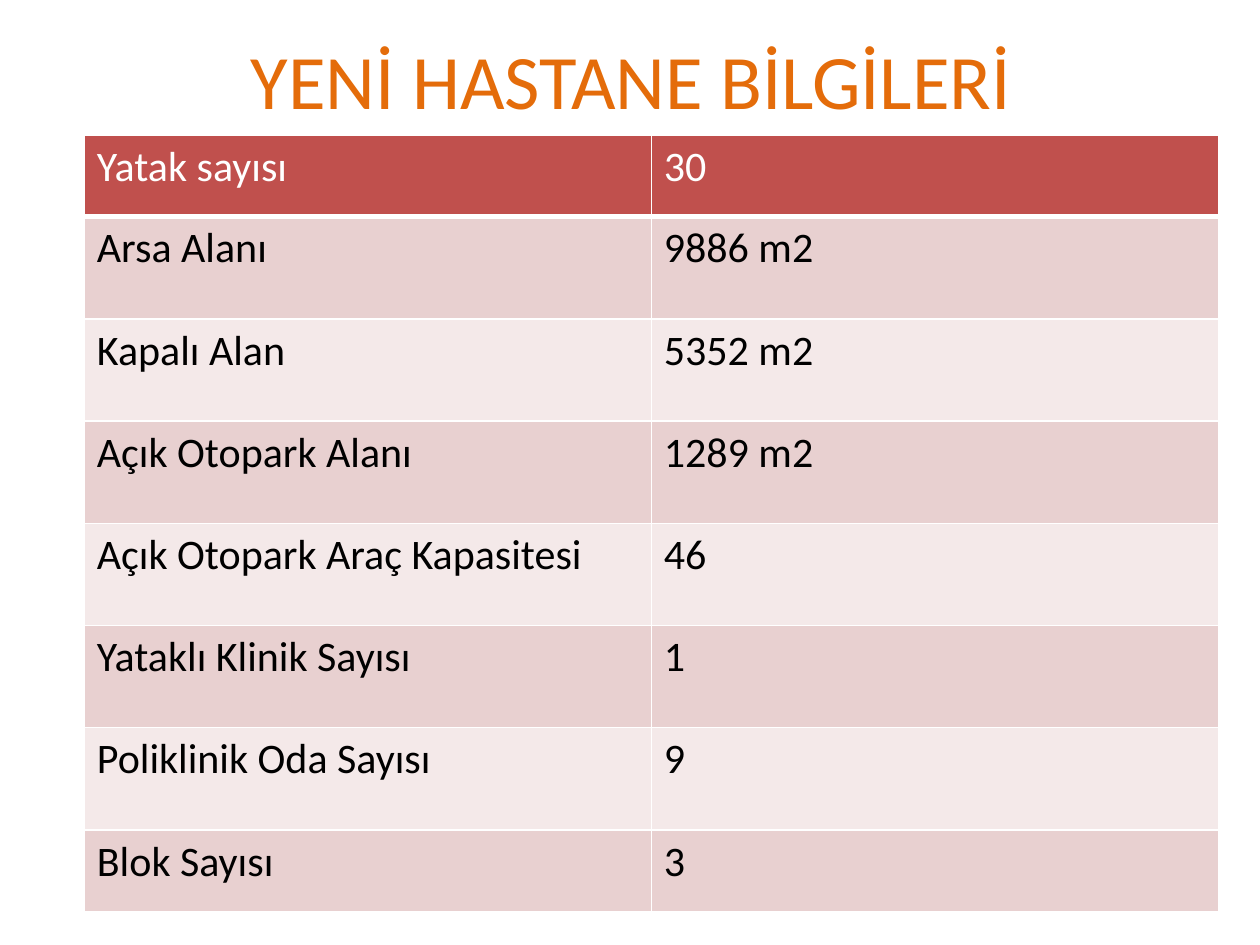
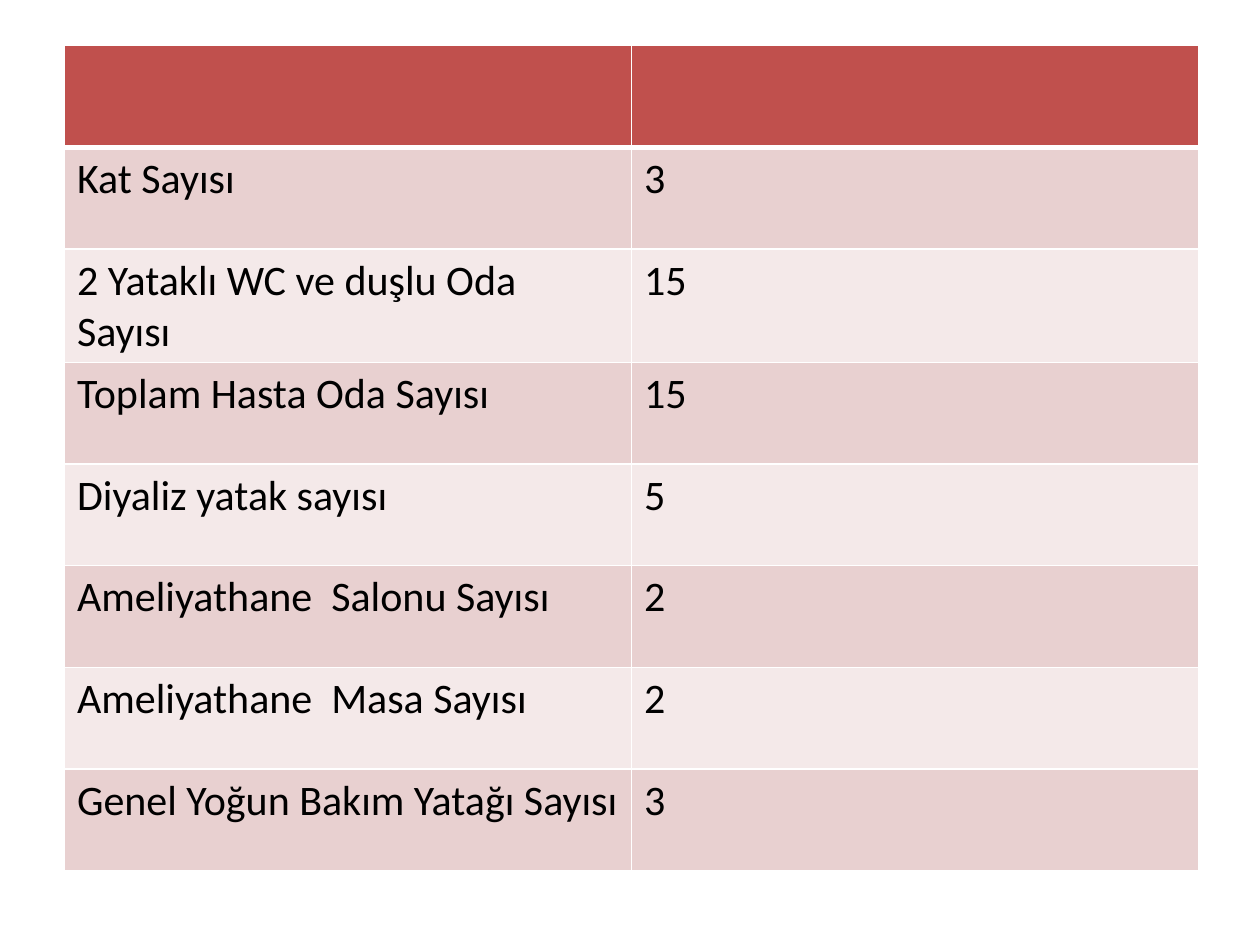
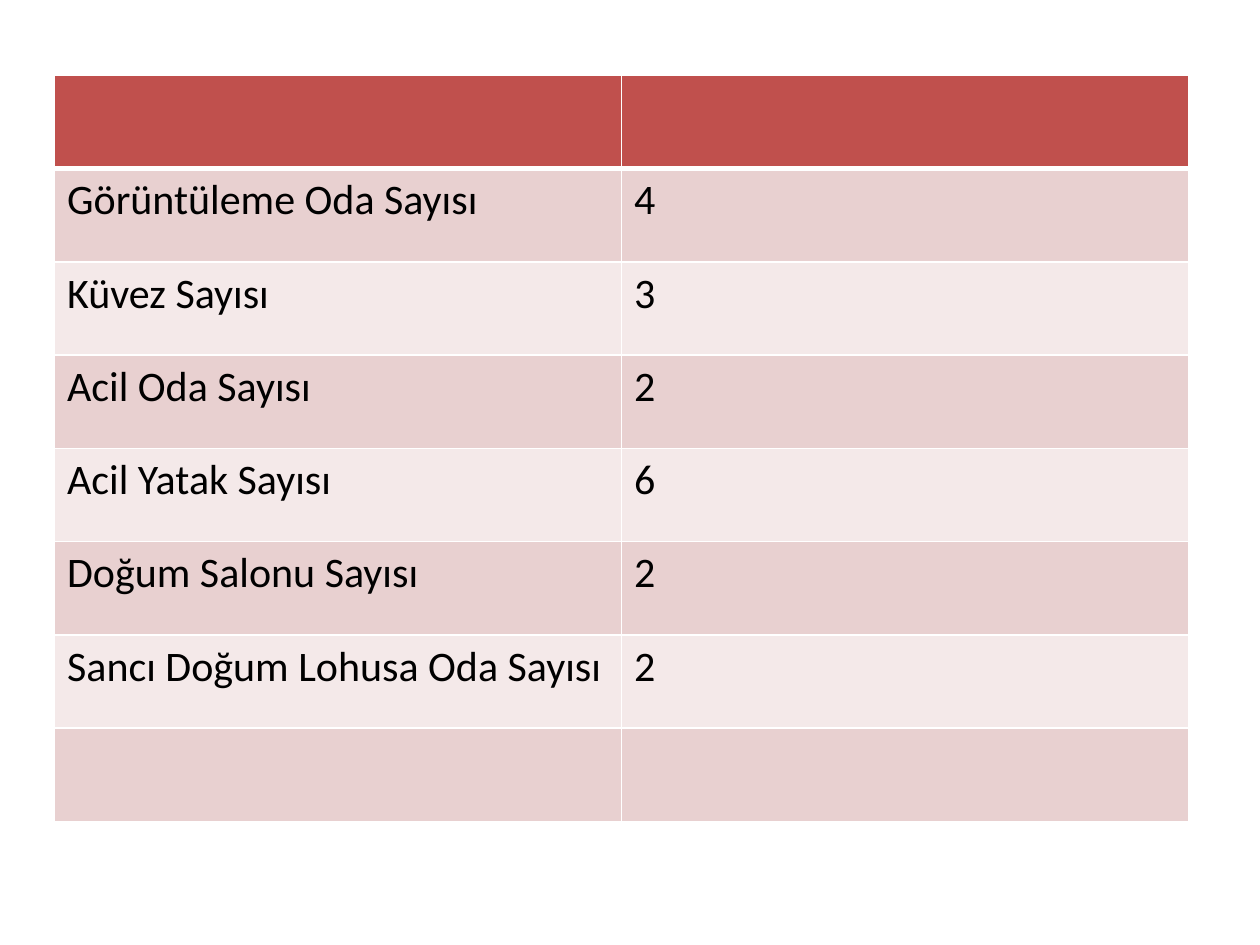
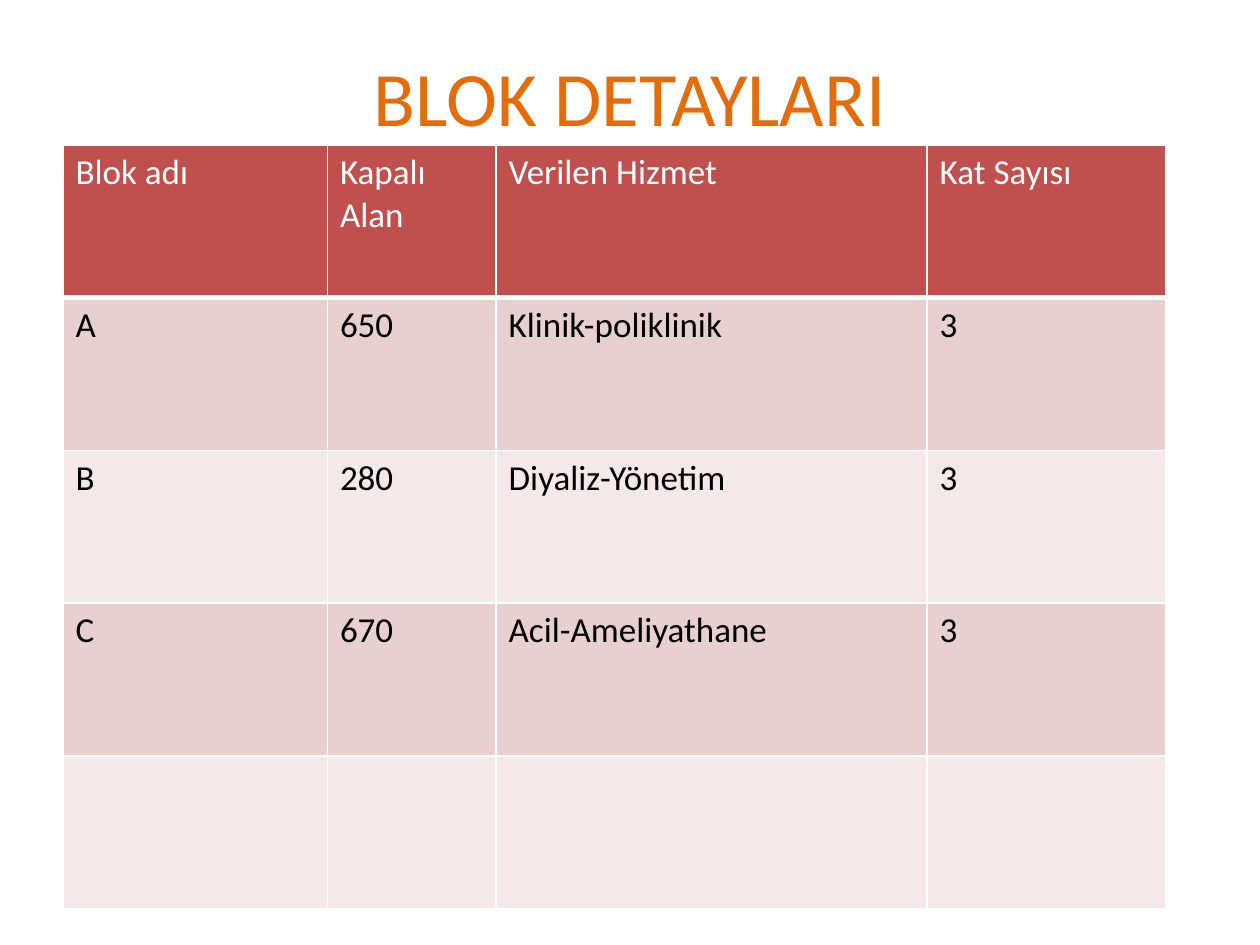
import lxml.etree
import pptx
import pptx.dml.color
import pptx.enum.text
import pptx.oxml.ns
import pptx.util

Cm = pptx.util.Cm
Pt = pptx.util.Pt

FONT = "Calibri"
TITLE_COLOR = "E46C0A"
HEADER_FILL = "C0504D"
BAND_FILLS = ("E8D0D0", "F4E9E9")
WHITE = "FFFFFF"
BLACK = "000000"
TITLE_WIDTH = 22.86
PAIR_COLUMNS = [11.43, 11.43]

HOSPITAL_ROWS = [
    ("Yatak sayısı", "30"),
    ("Arsa Alanı", "9886 m2"),
    ("Kapalı Alan", "5352 m2"),
    ("Açık Otopark Alanı", "1289 m2"),
    ("Açık Otopark Araç Kapasitesi", "46"),
    ("Yataklı Klinik Sayısı", "1"),
    ("Poliklinik Oda Sayısı", "9"),
    ("Blok Sayısı", "3"),
]
ROOM_ROWS = [
    ("", ""),
    ("Kat Sayısı", "3"),
    ("2 Yataklı WC ve duşlu Oda Sayısı", "15"),
    ("Toplam Hasta Oda Sayısı", "15"),
    ("Diyaliz yatak sayısı", "5"),
    ("Ameliyathane  Salonu Sayısı", "2"),
    ("Ameliyathane  Masa Sayısı", "2"),
    ("Genel Yoğun Bakım Yatağı Sayısı", "3"),
]
CARE_ROWS = [
    ("", ""),
    ("Görüntüleme Oda Sayısı", "4"),
    ("Küvez Sayısı", "3"),
    ("Acil Oda Sayısı", "2"),
    ("Acil Yatak Sayısı", "6"),
    ("Doğum Salonu Sayısı", "2"),
    ("Sancı Doğum Lohusa Oda Sayısı", "2"),
    ("", ""),
]
BLOCK_ROWS = [
    ("Blok adı", "Kapalı Alan", "Verilen Hizmet", "Kat Sayısı"),
    ("A", "650", "Klinik-poliklinik", "3"),
    ("B", "280", "Diyaliz-Yönetim", "3"),
    ("C", "670", "Acil-Ameliyathane", "3"),
    ("", "", "", ""),
]


def rgb(color):
    return pptx.dml.color.RGBColor.from_string(color)


def add_slide(presentation):
    return presentation.slides.add_slide(presentation.slide_layouts[6])


def format_runs(paragraph, size, color):
    for run in paragraph.runs:
        run.font.name = FONT
        run.font.size = Pt(size)
        run.font.color.rgb = rgb(color)


def add_title(slide, text, left, top, height):
    title = slide.shapes.add_textbox(Cm(left), Cm(top), Cm(TITLE_WIDTH), Cm(height))
    text_frame = title.text_frame
    text_frame.word_wrap = True
    text_frame.vertical_anchor = pptx.enum.text.MSO_ANCHOR.MIDDLE
    text_frame.text = text
    paragraph = text_frame.paragraphs[0]
    paragraph.alignment = pptx.enum.text.PP_ALIGN.CENTER
    format_runs(paragraph, 44, TITLE_COLOR)


def set_borders(cell, bottom_width):
    qn = pptx.oxml.ns.qn
    properties = cell._tc.get_or_add_tcPr()
    widths = {"a:lnL": 1, "a:lnR": 1, "a:lnT": 1, "a:lnB": bottom_width}
    for position, (tag, width) in enumerate(widths.items()):
        line = lxml.etree.Element(qn(tag), w=str(Pt(width)))
        fill = lxml.etree.SubElement(line, qn("a:solidFill"))
        lxml.etree.SubElement(fill, qn("a:srgbClr"), val=WHITE)
        properties.insert(position, line)


def format_cell(cell, text, size, is_header, band_fill):
    cell.text_frame.text = text
    format_runs(cell.text_frame.paragraphs[0], size, WHITE if is_header else BLACK)
    cell.fill.solid()
    cell.fill.fore_color.rgb = rgb(HEADER_FILL if is_header else band_fill)
    set_borders(cell, 3 if is_header else 1)


def add_banded_table(slide, rows, left, top, column_widths, row_heights, size=24):
    table = slide.shapes.add_table(
        len(rows), len(column_widths), Cm(left), Cm(top),
        Cm(sum(column_widths)), Cm(sum(row_heights)),
    ).table
    for column, width in zip(table.columns, column_widths):
        column.width = Cm(width)
    for row_index, (texts, height) in enumerate(zip(rows, row_heights)):
        table.rows[row_index].height = Cm(height)
        band_fill = BAND_FILLS[(row_index - 1) % 2]
        for column_index, text in enumerate(texts):
            cell = table.cell(row_index, column_index)
            format_cell(cell, text, size, row_index == 0, band_fill)


def main():
    presentation = pptx.Presentation()
    presentation.slide_width = Cm(25.4)
    presentation.slide_height = Cm(19.05)

    hospital = add_slide(presentation)
    add_title(hospital, "YENİ HASTANE BİLGİLERİ", 1.3, 0, 3.18)
    add_banded_table(hospital, HOSPITAL_ROWS, 1.7, 2.72, PAIR_COLUMNS,
                     [1.65] + [2.06] * 6 + [1.65])

    rooms = add_slide(presentation)
    add_banded_table(rooms, ROOM_ROWS, 1.3, 0.92, PAIR_COLUMNS, [2.05] * 8)

    care = add_slide(presentation)
    add_banded_table(care, CARE_ROWS, 1.1, 1.52, PAIR_COLUMNS, [1.88] * 8)

    blocks = add_slide(presentation)
    add_title(blocks, "BLOK DETAYLARI", 1.27, 0.76, 2.36)
    add_banded_table(blocks, BLOCK_ROWS, 1.27, 2.92, [5.33, 3.4, 8.69, 4.8],
                     [3.08] * 5, size=20)

    presentation.save("out.pptx")


if __name__ == "__main__":
    main()
